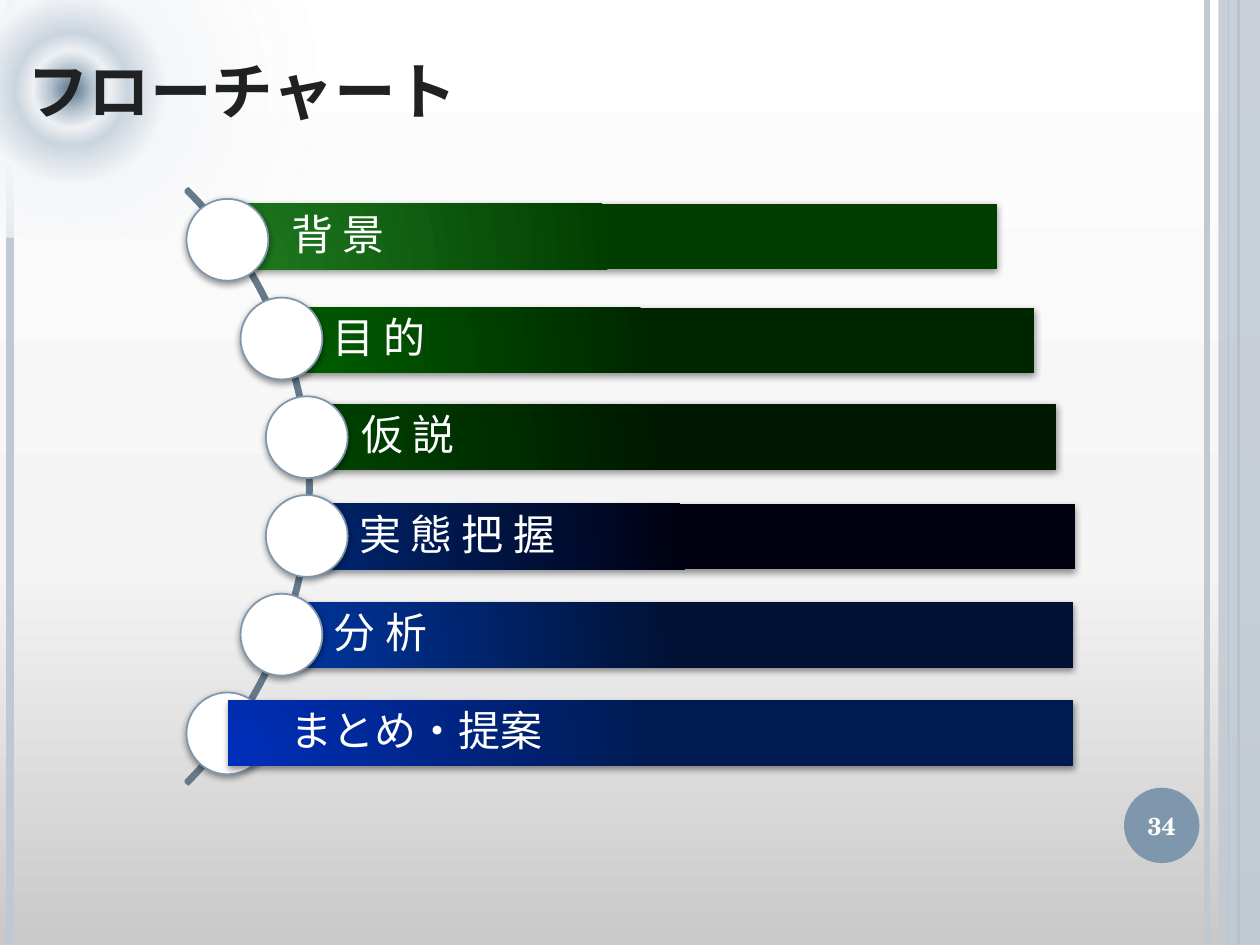
from lxml import etree
from pptx import Presentation, util as u
from pptx.dml.color import RGBColor
from pptx.enum import shapes, text
from pptx.oxml import parse_xml
from pptx.oxml.ns import nsdecls, qn

KIND = shapes.MSO_SHAPE
GOTHIC = "Noto Sans CJK JP"
WHITE, STEEL, PALE = "FFFFFF", "7E97AD", "C0C9D3"


def rgb(code):
    return RGBColor.from_string(code)


def grad(item, stops, shade):
    """Fill a shape or slide background with (percent, colour, alpha) stops."""
    stop = "".join(
        f'<a:gs pos="{pos * 1000}"><a:srgbClr val="{code}">'
        f'<a:alpha val="{alpha * 1000}"/></a:srgbClr></a:gs>'
        for pos, code, alpha in stops)
    item.fill.gradient()
    old = next(item._element.iter(qn("a:gradFill")))
    old.getparent().replace(old, parse_xml(
        f'<a:gradFill {nsdecls("a")} rotWithShape="1">'
        f"<a:gsLst>{stop}</a:gsLst>{shade}</a:gradFill>"))


def circle(left, top, right, low):
    return (f'<a:path path="circle"><a:fillToRect l="{left}000" t="{top}000" '
            f'r="{right}000" b="{low}000"/></a:path>')


deck = Presentation()
deck.slide_width, deck.slide_height = u.Cm(25.4), u.Cm(19.05)
slide = deck.slides.add_slide(deck.slide_layouts[6])
pool = slide.shapes

# Background
grad(slide.background, [(0, "C9C9C9", 100), (40, "F4F4F4", 100), (100, WHITE, 100)],
     '<a:lin ang="16200000" scaled="0"/>') if hasattr(slide.background, "_element") else None

# Side rules and band
for x, code, wide in [(24.33, PALE, 3), (0.2, PALE, 4.5),
                      (24.97, STEEL, 1.5), (24.77, STEEL, 0.75)]:
    rule = pool.add_connector(shapes.MSO_CONNECTOR.STRAIGHT,
                              u.Cm(x), u.Cm(0), u.Cm(x), u.Cm(19.05))
    rule.line.color.rgb = rgb(code)
    rule.line.width = u.Pt(wide)
    etree.SubElement(rule._element.spPr, qn("a:effectLst"))

band = pool.add_shape(KIND.RECTANGLE, u.Cm(24.56), u.Cm(0), u.Cm(0.84), u.Cm(19.05))
band.shadow.inherit = False
band.fill.solid()
band.fill.fore_color.rgb = rgb(PALE)
tint = next(band._element.spPr.iter(qn("a:srgbClr")))
etree.SubElement(tint, qn("a:alpha")).set("val", "87000")
band.line.fill.background()

# Page number
badge = pool.add_shape(KIND.OVAL, u.Cm(22.66), u.Cm(15.88), u.Cm(1.52), u.Cm(1.52))
badge.shadow.inherit = False
badge.fill.solid()
badge.fill.fore_color.rgb = rgb(STEEL)
badge.line.fill.background()
frame = badge.text_frame
frame.margin_left = frame.margin_right = frame.margin_top = frame.margin_bottom = 0
frame.vertical_anchor = text.MSO_ANCHOR.MIDDLE
para = frame.paragraphs[0]
para.alignment = text.PP_ALIGN.CENTER
run = para.add_run()
run.text = "34"
run.font.name, run.font.size, run.font.bold = "TeX Gyre Schola", u.Pt(14), True
run.font.color.rgb = rgb(WHITE)

# Ripple behind the title
glow = pool.add_shape(KIND.RECTANGLE, u.Cm(-3.71), u.Cm(-1.19), u.Cm(10.29), u.Cm(5.97))
glow.shadow.inherit = False
glow.line.fill.background()
grad(glow, [(0, "577289", 100), (7, "B2C1CE", 100), (13, "EFF2F5", 100),
            (19, "CBD5DE", 100), (32, "F4F6F8", 100), (100, WHITE, 0)],
     circle(50, 50, 50, 50))

# Title
title = pool.add_textbox(u.Cm(0), u.Cm(0.53), u.Cm(25.4), u.Cm(2.21))
frame = title.text_frame
frame.word_wrap = True
frame.margin_left = u.Cm(0.55)
frame.vertical_anchor = text.MSO_ANCHOR.BOTTOM
run = frame.paragraphs[0].add_run()
run.text = "フローチャート"
run.font.name, run.font.size, run.font.bold = GOTHIC, u.Pt(44), True
run.font.color.rgb = rgb("1F2123")
run.font._element.set("cap", "small")
etree.SubElement(run.font._element, qn("a:ea")).set("typeface", GOTHIC)

# Arc through the steps
arc = pool.add_shape(KIND.BLOCK_ARC, u.Cm(-10.67), u.Cm(1.32), u.Cm(16.94), u.Cm(16.97))
arc.shadow.inherit = False
for i, value in enumerate((189, 27, 0.004)):
    arc.adjustments[i] = value
arc.fill.background()
arc.line.color.rgb = rgb("65798B")
arc.line.width = u.Pt(2)

# Steps: label, bar left, top and width, inset, gradient ends, dot left
steps = [
    ("背 景", 4.83, 4.11, 15.27, 1.04, "1F7A1F", "003D00", 3.76),
    ("目 的", 5.66, 6.2, 15.19, 1.04, "006100", "002600", 4.85),
    ("仮 説", 6.25, 8.15, 15.04, 1.04, "004500", "001700", 5.36),
    ("実 態 把 握", 6.2, 10.16, 15.47, 1.04, "002774", "00000F", 5.36),
    ("分 析", 5.69, 12.14, 15.95, 1.04, "0037A4", "001134", 4.85),
    ("まとめ・提案", 4.6, 14.12, 17.04, 1.25, "002FBC", "001B51", 3.76),
]
for i, (label, left, top, wide, inset, near, far, x) in enumerate(steps):
    bar = pool.add_shape(KIND.RECTANGLE, u.Cm(left), u.Cm(top), u.Cm(wide), u.Cm(1.32))
    grad(bar, [(0, near, 100), (100, far, 100)], circle(5, 100, 120, 10))
    bar.line.fill.background()
    frame = bar.text_frame
    frame.word_wrap = True
    frame.margin_left = u.Cm(inset)
    frame.margin_right = frame.margin_top = frame.margin_bottom = u.Cm(0.18)
    frame.vertical_anchor = text.MSO_ANCHOR.MIDDLE
    para = frame.paragraphs[0]
    para.alignment = text.PP_ALIGN.LEFT
    para.line_spacing = 0.9
    run = para.add_run()
    run.text = label
    run.font.name, run.font.size = GOTHIC, u.Pt(24)
    run.font.color.rgb = rgb(WHITE)
    etree.SubElement(run.font._element, qn("a:ea")).set("typeface", GOTHIC)

    dot = pool.add_shape(KIND.OVAL, u.Cm(x), u.Cm(4.01 + 1.99 * i), u.Cm(1.65), u.Cm(1.65))
    dot.fill.solid()
    dot.fill.fore_color.rgb = rgb(WHITE)
    dot.line.color.rgb = rgb(STEEL)
    dot.line.width = u.Pt(1)

    for item in (bar, dot):
        item.shadow.inherit = False
        cast = item._element.spPr.find(qn("a:effectLst"))
        cast.append(parse_xml(
            f'<a:outerShdw {nsdecls("a")} blurRad="{u.Pt(4)}" dist="{u.Pt(1.6)}" '
            'dir="5400000" rotWithShape="0"><a:srgbClr val="000000">'
            '<a:alpha val="42000"/></a:srgbClr></a:outerShdw>'))

# The last bar lies over its dot
dot._element.addnext(bar._element)

deck.save("out.pptx")
